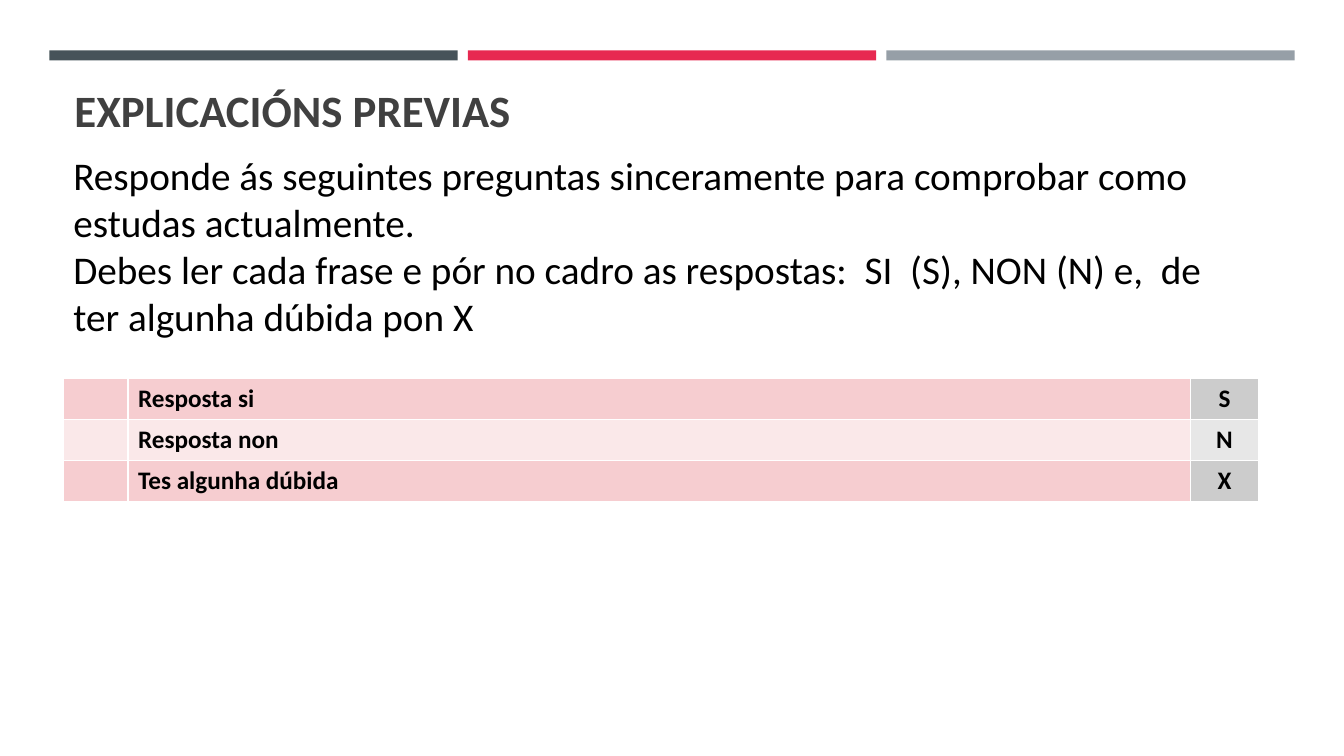
from lxml.etree import SubElement
from pptx import Presentation
from pptx.dml.color import RGBColor
from pptx.enum.shapes import MSO_SHAPE
from pptx.enum.text import PP_ALIGN
from pptx.oxml.ns import qn
from pptx.util import Inches, Pt

COLORS = {
    "slate": "465359", "red": "E72951", "steel": "969FA7",
    "title": "404040", "text": "000000", "border": "FFFFFF",
    "pink": "F6CDD0", "pale pink": "FAE8E9",
    "gray": "CCCCCC", "pale gray": "E7E7E7",
}
ROW_HEIGHT = 0.41


def write(frame, lines, size, color="text", bold=False, align=PP_ALIGN.LEFT):
    frame.word_wrap = True
    for i, line in enumerate(lines):
        paragraph = frame.paragraphs[0] if i == 0 else frame.add_paragraph()
        paragraph.text = line
        paragraph.alignment = align
        font = paragraph.font
        font.name, font.size, font.bold = "Calibri", Pt(size), bold
        font.color.rgb = RGBColor.from_string(COLORS[color])


def add_answers(left, widths, rows, shades, align):
    """Add a table whose rows alternate between two shades, with white borders."""
    table = slide.shapes.add_table(
        len(rows), len(widths), Inches(left), Inches(3.75),
        Inches(sum(widths)), Inches(ROW_HEIGHT * len(rows))).table
    for column, width in zip(table.columns, widths):
        column.width = Inches(width)
    for r, row in enumerate(rows):
        table.rows[r].height = Inches(ROW_HEIGHT)
        for c, answer in enumerate(row):
            cell = table.cell(r, c)
            write(cell.text_frame, [answer], 18, bold=True, align=align)
            properties = cell._tc.get_or_add_tcPr()
            for side in ("a:lnL", "a:lnR", "a:lnT", "a:lnB"):
                border = SubElement(properties, qn(side), w=str(Pt(1)))
                solid = SubElement(border, qn("a:solidFill"))
                SubElement(solid, qn("a:srgbClr"), val=COLORS["border"])
            cell.fill.solid()
            cell.fill.fore_color.rgb = RGBColor.from_string(COLORS[shades[r % 2]])


prs = Presentation()
prs.slide_width, prs.slide_height = Inches(13.33), Inches(7.5)
slide = prs.slides.add_slide(prs.slide_layouts[6])

for i, color in enumerate(("slate", "red", "steel")):
    bar = slide.shapes.add_shape(
        MSO_SHAPE.RECTANGLE, Inches(0.49 + 4.15 * i), Inches(0.5),
        Inches(4.05), Inches(0.1))
    bar.shadow.inherit = False
    bar.fill.solid()
    bar.fill.fore_color.rgb = RGBColor.from_string(COLORS[color])
    bar.line.fill.background()

title = slide.shapes.add_textbox(Inches(0.64), Inches(0.77), Inches(12.06), Inches(0.57))
write(title.text_frame, ["EXPLICACIÓNS PREVIAS"], 32, "title", bold=True)

instructions = slide.shapes.add_textbox(
    Inches(0.63), Inches(1.45), Inches(11.86), Inches(1.99))
write(instructions.text_frame, [
    "Responde ás seguintes preguntas sinceramente para comprobar como estudas actualmente.",
    "Debes ler cada frase e pór no cadro as respostas:  SI  (S), NON (N) e,  de ter algunha dúbida pon X",
], 28)

add_answers(0.63, [0.64, 10.54],
            [("", "Resposta si"), ("", "Resposta non"), ("", "Tes algunha dúbida")],
            ("pink", "pale pink"), PP_ALIGN.LEFT)
add_answers(11.81, [0.67], ["S", "N", "X"], ("gray", "pale gray"), PP_ALIGN.CENTER)

prs.save("out.pptx")
